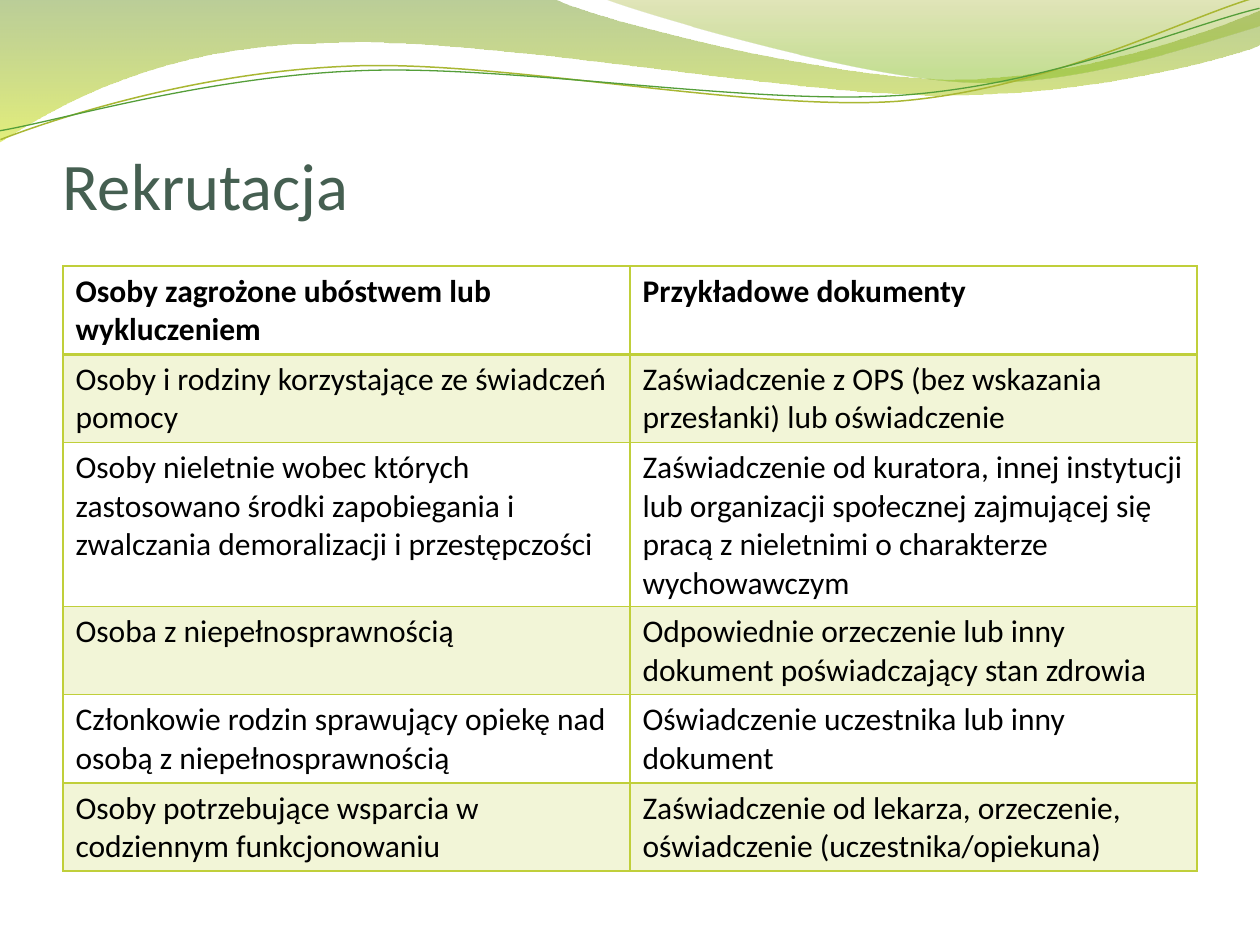
from pptx import Presentation
from pptx.dml.color import RGBColor
from pptx.enum.text import MSO_ANCHOR
from pptx.oxml.ns import qn
from pptx.util import Emu, Pt
from lxml.etree import SubElement

PX = 914400 / 126
FONT = "Calibri"
TITLE_GREEN = RGBColor(0x45, 0x5F, 0x51)
BLACK = RGBColor(0, 0, 0)
LIME = RGBColor(0xC0, 0xCF, 0x3A)
OLIVE_LINE = RGBColor(0xA9, 0xB7, 0x33)
GREEN_LINE = RGBColor(0x54, 0x9E, 0x39)

# Gradient stops: position, colour, opacity in percent
LEFT_GRADIENT = [(0, RGBColor(0x69, 0x92, 0x1C), 45), (1, RGBColor(0xCC, 0xE1, 0x0F), 55)]
RIGHT_GRADIENT = [(0, RGBColor(0x9B, 0xAA, 0x1A), 30), (0.8, RGBColor(0x81, 0xBA, 0x16), 45)]

# Outlines in px: two numbers are a straight step, six are a Bezier curve
LEFT_WAVE = [(0, 0), (554, -1), (599, 21, 835, 79, 955, 79),
             (1075, 79, 1207, 33, 1260, 11), (1261, 45),
             (1239, 55, 1095, 96, 940, 95), (784, 95, 480, 35, 324, 43),
             (163, 45, 58, 105, -1, 142)]
RIGHT_WAVE = [(604, -1), (641, 14, 859, 78, 968, 82),
              (1077, 87, 1211, 40, 1260, 26), (1260, 0)]
OLIVE_CURVE = [(-2, 110), (58, 90, 198, 52, 349, 53),
               (499, 53, 744, 117, 895, 114), (1049, 109, 1184, 45, 1259, 27)]
GREEN_CURVE = [(-2, 101), (57, 94, 205, 57, 357, 58),
               (508, 58, 750, 112, 902, 108), (1052, 104, 1188, 52, 1262, 38)]
CURVE_ROTATION = 357.3

ROWS = [
    ("Osoby zagrożone ubóstwem lub wykluczeniem", "Przykładowe dokumenty"),
    ("Osoby i rodziny korzystające ze świadczeń pomocy",
     "Zaświadczenie z OPS (bez wskazania przesłanki) lub oświadczenie"),
    ("Osoby nieletnie wobec których zastosowano środki zapobiegania i "
     "zwalczania demoralizacji i przestępczości",
     "Zaświadczenie od kuratora, innej instytucji lub organizacji społecznej "
     "zajmującej się pracą z nieletnimi o charakterze wychowawczym"),
    ("Osoba z niepełnosprawnością",
     "Odpowiednie orzeczenie lub inny dokument poświadczający stan zdrowia"),
    ("Członkowie rodzin sprawujący opiekę nad osobą z niepełnosprawnością",
     "Oświadczenie uczestnika lub inny dokument"),
    ("Osoby potrzebujące wsparcia w codziennym funkcjonowaniu",
     "Zaświadczenie od lekarza, orzeczenie, oświadczenie (uczestnika/opiekuna)"),
]
ROW_HEIGHT = 52  # the least height; rows grow with their text


def px(n):
    return Emu(round(n * PX))


def set_alpha(color_element, percent):
    SubElement(color_element, qn("a:alpha")).set("val", str(percent * 1000))


def add_outline(slide, outline, close):
    """Lay straight steps through all points, then join each curve's three into a Bezier."""
    points = [step[i:i + 2] for step in outline for i in range(0, len(step), 2)]
    builder = slide.shapes.build_freeform(*points[0], scale=PX)
    builder.add_line_segments(points[1:], close=close)
    sp = builder.convert_to_shape()
    sp.shadow.inherit = False
    line_steps = iter(list(sp._element.iter(qn("a:lnTo"))))
    for step in outline[1:]:
        first = next(line_steps)
        if len(step) == 6:
            first.tag = qn("a:cubicBezTo")
            for other in (next(line_steps), next(line_steps)):
                first.append(other[0])
                other.getparent().remove(other)
    return sp


def add_wave(slide, outline, gradient):
    sp = add_outline(slide, outline, True)
    sp.line.fill.background()
    sp.fill.gradient()
    sp.fill.gradient_angle = 270
    for stop, (position, color, _) in zip(sp.fill.gradient_stops, gradient):
        stop.position = position
        stop.color.rgb = color
    colors = list(sp._element.spPr.iter(qn("a:srgbClr")))
    for element, (_, _, opacity) in zip(colors, gradient):
        set_alpha(element, opacity)


def add_curve(slide, outline, color, width):
    sp = add_outline(slide, outline, False)
    sp.rotation = CURVE_ROTATION
    sp.fill.background()
    sp.line.color.rgb = color
    sp.line.width = Pt(width)


def format_runs(tf, size, color, bold=False):
    for p in tf.paragraphs:
        for r in p.runs:
            r.font.name = FONT
            r.font.size = Pt(size)
            r.font.bold = bold
            r.font.color.rgb = color


def add_title(slide, text):
    tf = slide.shapes.add_textbox(px(63), px(98), px(1134), px(126)).text_frame
    tf.word_wrap = True
    tf.vertical_anchor = MSO_ANCHOR.BOTTOM
    tf.margin_left = tf.margin_right = tf.margin_bottom = 0
    tf.text = text
    format_runs(tf, 38, TITLE_GREEN)


def set_borders(cell, widths):
    """Draw the cell's borders and put them before its fill."""
    tc_pr = cell._tc.get_or_add_tcPr()
    for i, (side, width) in enumerate(widths.items()):
        ln = SubElement(tc_pr, qn("a:ln" + side), w=str(Pt(width)))
        fill = SubElement(ln, qn("a:solidFill"))
        SubElement(fill, qn("a:srgbClr"), val=str(LIME))
        tc_pr.insert(i, ln)


def add_documents_table(slide):
    frame = slide.shapes.add_table(len(ROWS), 2, px(63), px(266), px(1134), px(605))
    table = frame.table
    table.horz_banding = False
    for i, (row, texts) in enumerate(zip(table.rows, ROWS)):
        row.height = px(ROW_HEIGHT)
        for cell, text in zip(row.cells, texts):
            cell.text = text
            format_runs(cell.text_frame, 18, BLACK, bold=i == 0)
            if i % 2:
                cell.fill.solid()
                cell.fill.fore_color.rgb = LIME
                set_alpha(cell._tc.tcPr.find(".//" + qn("a:srgbClr")), 20)
            else:
                cell.fill.background()
            set_borders(cell, {"L": 1, "R": 1, "T": 2 if i == 1 else 1,
                               "B": 2 if i == 0 else 1})
    frame.height = px(605)


def main():
    prs = Presentation()
    prs.slide_width, prs.slide_height = px(1260), px(945)
    slide = prs.slides.add_slide(prs.slide_layouts[6])
    add_wave(slide, LEFT_WAVE, LEFT_GRADIENT)
    add_wave(slide, RIGHT_WAVE, RIGHT_GRADIENT)
    add_curve(slide, OLIVE_CURVE, OLIVE_LINE, 0.85)
    add_curve(slide, GREEN_CURVE, GREEN_LINE, 0.75)
    add_title(slide, "Rekrutacja")
    add_documents_table(slide)
    prs.save("out.pptx")


if __name__ == "__main__":
    main()
